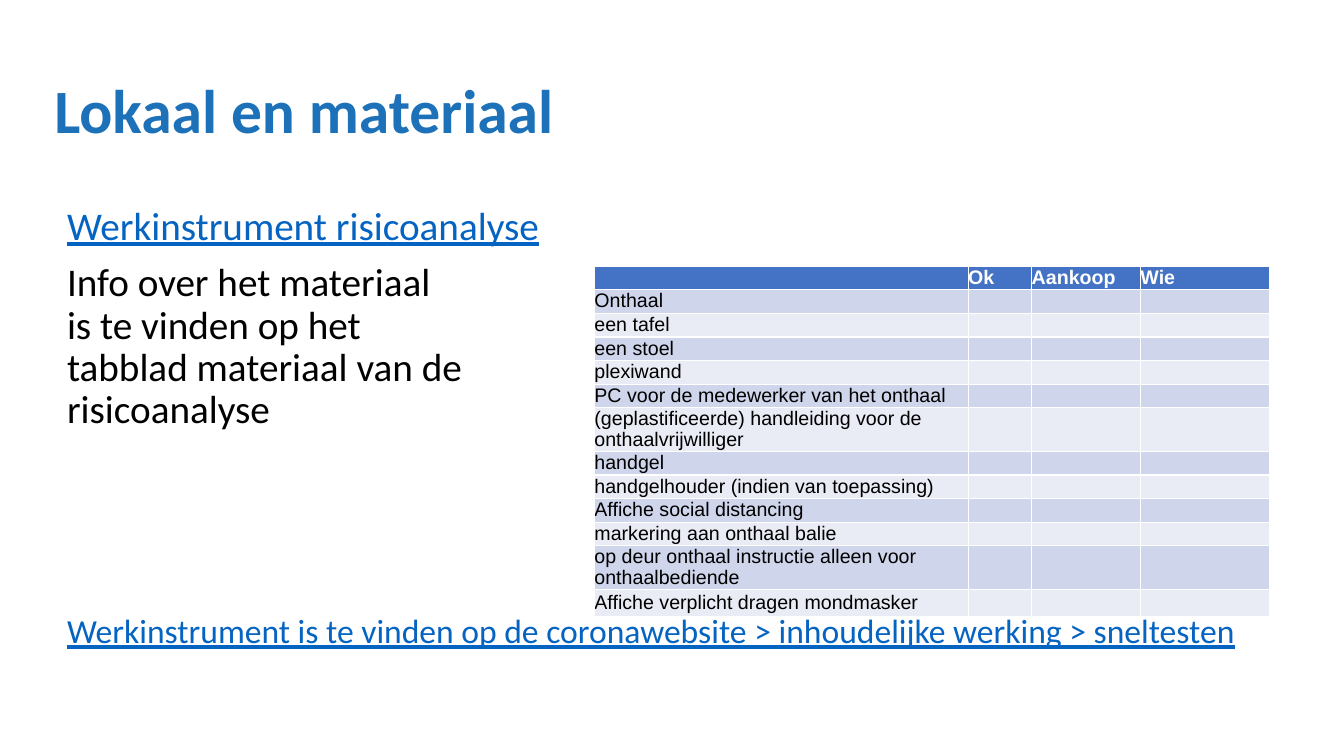
from lxml import etree
from pptx import Presentation
from pptx.dml.color import RGBColor
from pptx.enum.text import MSO_ANCHOR
from pptx.oxml.ns import qn
from pptx.util import Cm, Pt

MIDDLE, TOP = MSO_ANCHOR.MIDDLE, MSO_ANCHOR.TOP

# Content
TITLE = "Lokaal en materiaal"
TOOL = "Werkinstrument risicoanalyse"
INFO = ["Info over het materiaal", "is te vinden op het",
        "tabblad materiaal van de", "risicoanalyse"]
SITE = ("Werkinstrument is te vinden op de coronawebsite > "
        "inhoudelijke werking > sneltesten")
HEAD = ["", "Ok", "Aankoop", "Wie"]
ITEMS = [
    "Onthaal", "een tafel", "een stoel", "plexiwand",
    "PC voor de medewerker van het onthaal",
    "(geplastificeerde) handleiding voor de onthaalvrijwilliger",
    "handgel", "handgelhouder (indien van toepassing)",
    "Affiche social distancing", "markering aan onthaal balie",
    "op deur onthaal instructie alleen voor onthaalbediende",
    "Affiche verplicht dragen mondmasker",
]

# Style and measures in cm
BLUE, LINK, BLACK, WHITE = "1D71B8", "0563C1", "000000", "FFFFFF"
HEAD_FILL, BANDS = "4472C4", ["CFD5EA", "E9EBF5"]
COLS = [9.42, 1.6, 2.74, 3.25]
LINE, TWO, ENDS = 0.56, 1.1, {0: 0.58, len(ITEMS): 0.68}
WRAP = 45


def color(code):
    return RGBColor.from_string(code)


def write(frame, text, size=28, font="Calibri", hue=BLACK, bold=False,
          under=False, space=0, lead=0.9, more=False):
    """Write one paragraph; a list of strings gives broken lines."""
    para = frame.add_paragraph() if more else frame.paragraphs[0]
    para.line_spacing = lead
    para.space_before = Pt(space)
    lines = [text] if isinstance(text, str) else text
    for i, line in enumerate(lines):
        if i:
            para.add_line_break()
        if line:
            run = para.add_run()
            run.text = line
            face = run.font
            face.name, face.size, face.bold = font, Pt(size), bold
            face.underline = under
            face.color.rgb = color(hue)
    # Empty cells need the same font, or their rows grow
    end = etree.SubElement(para._p, qn("a:endParaRPr"), sz=str(size * 100))
    etree.SubElement(end, qn("a:latin"), typeface=font)


def box(left, top, width, height, anchor=TOP):
    frame = slide.shapes.add_textbox(
        Cm(left), Cm(top), Cm(width), Cm(height)).text_frame
    frame.word_wrap = True
    frame.vertical_anchor = anchor
    return frame


deck = Presentation()
deck.slide_width, deck.slide_height = Cm(33.87), Cm(19.05)
slide = deck.slides.add_slide(deck.slide_layouts[6])

# Title and text
write(box(1.12, 1.02, 31.45, 3.68, MIDDLE), TITLE, size=44, hue=BLUE,
      bold=True)
body = box(1.44, 5.08, 13.2, 6.2)
write(body, TOOL, hue=LINK, under=True)
write(body, INFO, space=10, more=True)

# Checklist table; its style draws the white lines
rows = [HEAD] + [[item, "", "", ""] for item in ITEMS]
highs = [ENDS.get(r, TWO if len(row[0]) > WRAP else LINE)
         for r, row in enumerate(rows)]
table = slide.shapes.add_table(
    len(rows), len(COLS), Cm(14.98), Cm(6.71),
    Cm(sum(COLS)), Cm(sum(highs))).table
for col, width in zip(table.columns, COLS):
    col.width = Cm(width)
for r, row in enumerate(rows):
    table.rows[r].height = Cm(highs[r])
    for c, text in enumerate(row):
        cell = table.cell(r, c)
        cell.margin_left = cell.margin_right = 0
        cell.margin_top = cell.margin_bottom = 0
        cell.vertical_anchor = MIDDLE
        cell.fill.solid()
        cell.fill.fore_color.rgb = color(
            BANDS[(r - 1) % 2] if r else HEAD_FILL)
        write(cell.text_frame, text, size=14, font="Arial", lead=Pt(15),
              hue=BLACK if r else WHITE, bold=r == 0)

# Link line under the table
write(box(1.44, 15.36, 31.14, 1.2), SITE, size=24, hue=LINK, under=True)

deck.save("out.pptx")
